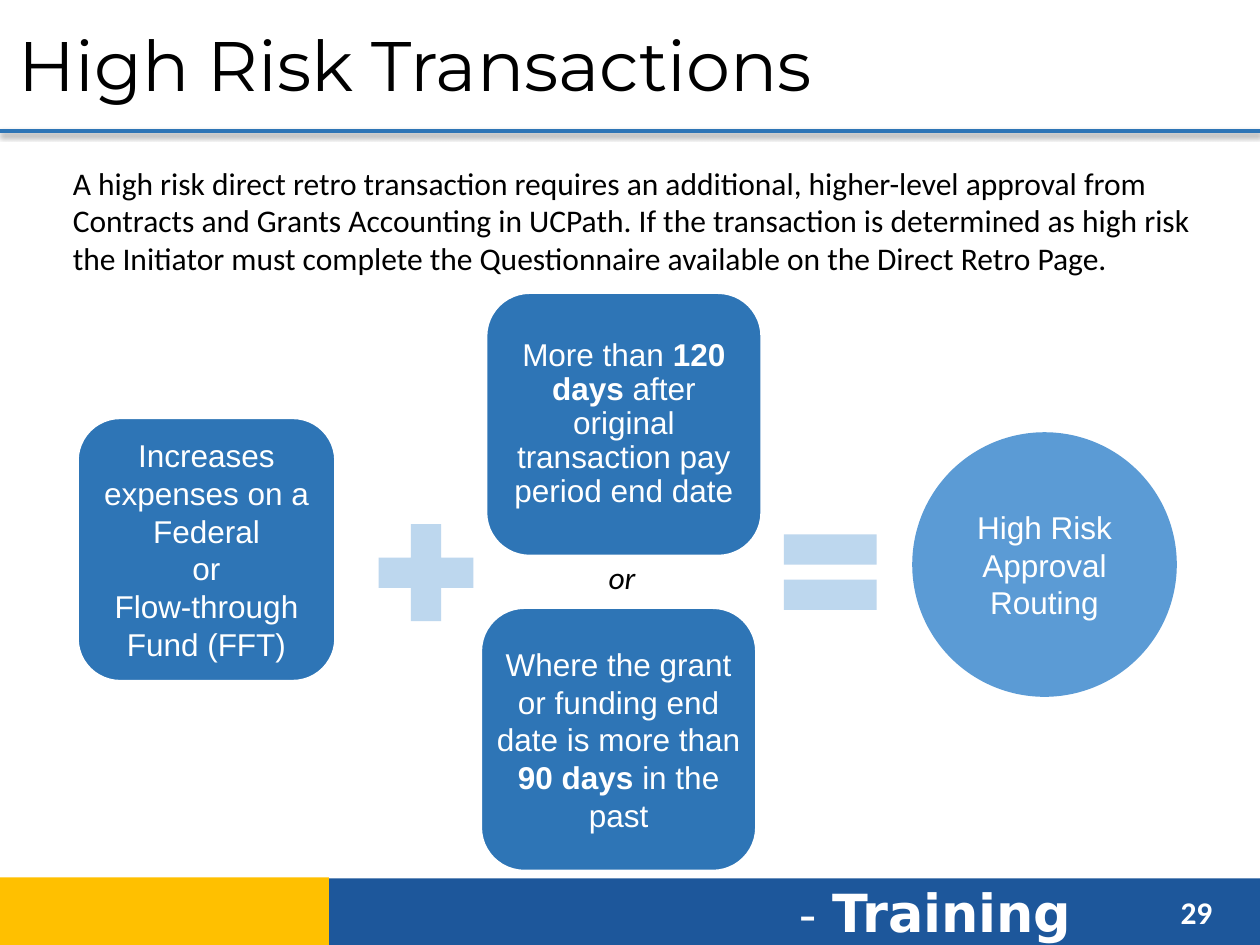
from dataclasses import dataclass

from lxml.etree import SubElement
from pptx import Presentation
from pptx.dml.color import RGBColor
from pptx.enum.shapes import MSO_CONNECTOR, MSO_SHAPE
from pptx.enum.text import MSO_ANCHOR, MSO_AUTO_SIZE, PP_ALIGN
from pptx.oxml.ns import qn
from pptx.util import Pt

COLORS = {
    "black": "000000",
    "white": "FFFFFF",
    "footer": "1D579B",
    "gold": "FFC000",
    "box": "2E75B6",
    "operator": "BDD7EE",
    "result": "5B9BD5",
}
TITLE_ONLY = 5


@dataclass(frozen=True)
class Frame:
    left: float
    top: float
    width: float
    height: float

    def lengths(self) -> list:
        return [Pt(value) for value in (self.left, self.top, self.width, self.height)]


@dataclass(frozen=True)
class Span:
    text: str
    bold: bool = False


@dataclass(frozen=True)
class Node:
    frame: Frame
    kind: MSO_SHAPE
    fill: str
    spans: tuple = ()
    outlined: bool = False
    line_spacing: float = 1.0


def color(name: str) -> RGBColor:
    return RGBColor.from_string(COLORS[name])


def set_font(font, face: str, size: float, color_name: str) -> None:
    font.name = face
    font.size = Pt(size)
    font.color.rgb = color(color_name)


def add_text(page, frame: Frame, text: str, face: str, size: float, color_name: str):
    box = page.shapes.add_textbox(*frame.lengths())
    box.text_frame.word_wrap = True
    para = box.text_frame.paragraphs[0]
    para.text = text
    set_font(para.font, face, size, color_name)
    return para


def add_node(page, node: Node) -> None:
    shape = page.shapes.add_shape(node.kind, *node.frame.lengths())
    shape.shadow.inherit = False
    shape.fill.solid()
    shape.fill.fore_color.rgb = color(node.fill)
    if node.outlined:
        shape.line.color.rgb = color("white")
        shape.line.width = Pt(2)
    else:
        shape.line.fill.background()
    if not node.spans:
        return
    text_frame = shape.text_frame
    text_frame.word_wrap = True
    text_frame.vertical_anchor = MSO_ANCHOR.MIDDLE
    text_frame.margin_left = text_frame.margin_right = Pt(2)
    text_frame.margin_top = text_frame.margin_bottom = Pt(2)
    para = text_frame.paragraphs[0]
    para.alignment = PP_ALIGN.CENTER
    para.line_spacing = node.line_spacing
    set_font(para.font, "Arial", 18, "white")
    for span in node.spans:
        for index, line in enumerate(span.text.split("\n")):
            if index:
                para.add_line_break()
            run = para.add_run()
            run.text = line
            set_font(run.font, "Arial", 18, "white")
            run.font.bold = span.bold


def add_title_rule(page) -> None:
    rule = page.shapes.add_connector(MSO_CONNECTOR.STRAIGHT, Pt(0), Pt(75), Pt(720), Pt(75))
    rule.line.color.rgb = color("box")
    rule.line.width = Pt(2.25)
    effects = SubElement(rule.line._get_or_add_ln().getparent(), qn("a:effectLst"))
    shadow = SubElement(effects, qn("a:outerShdw"), blurRad=str(Pt(3.1)),
                        dist=str(Pt(1.6)), dir="5400000", rotWithShape="0")
    shade = SubElement(shadow, qn("a:srgbClr"), val=COLORS["black"])
    SubElement(shade, qn("a:alpha"), val="38000")


NODES = [
    Node(Frame(44, 238.5, 148, 151), MSO_SHAPE.ROUNDED_RECTANGLE, "box",
         (Span("Increases expenses on a Federal\nor\nFlow-through Fund (FFT)"),), True),
    Node(Frame(206.7, 289.5, 73.6, 75.5), MSO_SHAPE.MATH_PLUS, "operator"),
    Node(Frame(277.5, 167, 158, 151), MSO_SHAPE.ROUNDED_RECTANGLE, "box",
         (Span("More than "), Span("120 days ", True),
          Span("after original transaction pay period end date")), True, 0.9),
    Node(Frame(438.5, 290.2, 72, 73.5), MSO_SHAPE.MATH_EQUAL, "operator"),
    Node(Frame(521.3, 247, 151.2, 151.2), MSO_SHAPE.OVAL, "result",
         (Span("High Risk Approval Routing"),)),
    Node(Frame(274.5, 347, 158, 151), MSO_SHAPE.ROUNDED_RECTANGLE, "box",
         (Span("Where the grant or funding end date is more than "),
          Span("90 days ", True), Span("in the past")), True),
]


def main() -> None:
    deck = Presentation()
    deck.slide_width, deck.slide_height = Pt(720), Pt(540)
    page = deck.slides.add_slide(deck.slide_layouts[TITLE_ONLY])

    # Title and its rule
    title = page.shapes.title
    title.left, title.top, title.width, title.height = Frame(3.5, 3, 720.5, 67).lengths()
    title.text_frame.auto_size = MSO_AUTO_SIZE.NONE
    title.text_frame.vertical_anchor = MSO_ANCHOR.MIDDLE
    heading = title.text_frame.paragraphs[0]
    heading.text = "High Risk Transactions"
    heading.alignment = PP_ALIGN.LEFT
    set_font(heading.font, "Montserrat", 40, "black")
    add_title_rule(page)

    # Footer band
    add_node(page, Node(Frame(188, 502, 532, 39.5), MSO_SHAPE.RECTANGLE, "footer"))
    add_node(page, Node(Frame(-1, 501.3, 189, 39.5), MSO_SHAPE.RECTANGLE, "gold"))
    label = add_text(page, Frame(449.5, 499.5, 201.5, 44), "- ", "DejaVu Sans", 28, "white")
    name = label.add_run()
    name.text = "Training"
    name.font.size = Pt(30)
    name.font.bold = True
    number = add_text(page, Frame(667.5, 507, 43, 29), "29", "Calibri", 18, "white")
    number.font.bold = True

    # Introduction
    add_text(page, Frame(34.5, 90, 671, 72),
             "A high risk direct retro transaction requires an additional, higher-level "
             "approval from Contracts and Grants Accounting in UCPath. If the transaction "
             "is determined as high risk the Initiator must complete the Questionnaire "
             "available on the Direct Retro Page.", "Calibri", 18, "black")

    # Risk equation
    for node in NODES:
        add_node(page, node)
    either = add_text(page, Frame(281, 315.5, 149, 29), "or", "Calibri", 18, "black")
    either.alignment = PP_ALIGN.CENTER
    either.font.italic = True

    deck.save("out.pptx")


if __name__ == "__main__":
    main()
